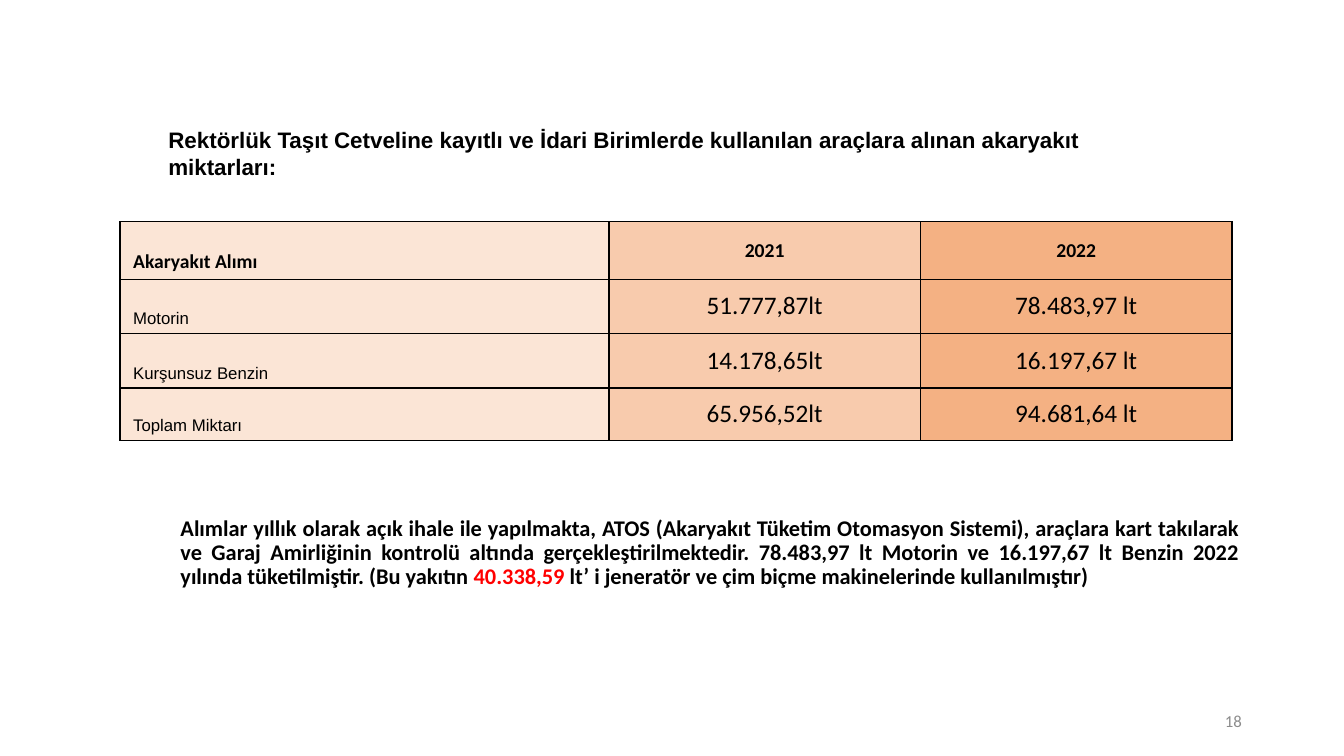
from dataclasses import dataclass

from lxml import etree
from pptx import Presentation
from pptx import util as u
from pptx.dml import color
from pptx.enum import text
from pptx.oxml import ns

WIDTH, HEIGHT = u.Inches(13.333), u.Inches(7.5)
COLUMN_SHARES = (36.38, 23.18, 23.18)
ROW_SHARES = (7.6, 7.2, 7.2, 6.93)
COLUMN_FILLS = ("FBE5D6", "F8CBAD", "F4B183")
FUEL_ROWS = (
    ("Akaryakıt Alımı", "2021", "2022"),
    ("Motorin", "51.777,87lt", "78.483,97 lt"),
    ("Kurşunsuz Benzin", "14.178,65lt", "16.197,67 lt"),
    ("Toplam Miktarı", "65.956,52lt", "94.681,64 lt"),
)
ALIGN, ANCHOR = text.PP_ALIGN, text.MSO_ANCHOR


@dataclass(frozen=True)
class Style:
    size: int
    font: str = "Calibri"
    bold: bool = False
    hue: str = "000000"
    align: ALIGN = ALIGN.LEFT
    anchor: ANCHOR = ANCHOR.TOP
    line_spacing: float = 1.0


@dataclass(frozen=True)
class Area:
    """A place on the slide, in percent of its width and height."""
    left: float
    top: float
    width: float
    height: float

    def lengths(self) -> tuple:
        return across(self.left), down(self.top), across(self.width), down(self.height)


NOTE = Style(16, bold=True, align=ALIGN.JUSTIFY, anchor=ANCHOR.BOTTOM, line_spacing=0.9)
HEADING = Style(16, "Arial", True)
PAGE_NUMBER = Style(12, hue="8C8C8C", align=ALIGN.RIGHT, anchor=ANCHOR.MIDDLE)
TABLE_TITLE = Style(14, bold=True, anchor=ANCHOR.BOTTOM)
YEAR = Style(14, bold=True, align=ALIGN.CENTER, anchor=ANCHOR.MIDDLE)
FUEL = Style(12, "Arial", anchor=ANCHOR.BOTTOM)
AMOUNT = Style(18, align=ALIGN.CENTER, anchor=ANCHOR.MIDDLE)


def across(percent: float) -> int:
    return round(WIDTH * percent / 100)


def down(percent: float) -> int:
    return round(HEIGHT * percent / 100)


def rgb(hue: str) -> color.RGBColor:
    return color.RGBColor.from_string(hue)


def set_all(target, values: dict) -> None:
    for name, value in values.items():
        setattr(target, name, value)


def write(frame, style: Style, *runs: tuple[str, str]) -> None:
    """Fill the first paragraph with (words, colour) runs; no colour means the style's."""
    paragraph = frame.paragraphs[0]
    set_all(paragraph, {"alignment": style.align, "line_spacing": style.line_spacing,
                        "space_before": u.Pt(0)})
    for words, hue in runs:
        run = paragraph.add_run()
        run.text = words
        set_all(run.font, {"size": u.Pt(style.size), "name": style.font, "bold": style.bold})
        run.font.color.rgb = rgb(hue or style.hue)


def fill_shape(shape, area: Area, style: Style, *runs: tuple[str, str]) -> None:
    set_all(shape, dict(zip(("left", "top", "width", "height"), area.lengths())))
    set_all(shape.text_frame, {"word_wrap": True, "auto_size": text.MSO_AUTO_SIZE.NONE,
                               "vertical_anchor": style.anchor})
    write(shape.text_frame, style, *runs)


def add_borders(cell) -> None:
    properties = cell._tc.get_or_add_tcPr()
    for side in ("a:lnL", "a:lnR", "a:lnT", "a:lnB"):
        line = etree.SubElement(properties, ns.qn(side), w=str(u.Pt(1)))
        fill = etree.SubElement(line, ns.qn("a:solidFill"))
        etree.SubElement(fill, ns.qn("a:srgbClr"), val="000000")


def add_fuel_table(slide, area: Area) -> None:
    table = slide.shapes.add_table(len(FUEL_ROWS), len(COLUMN_SHARES), *area.lengths()).table
    set_all(table, {"first_row": False, "horz_banding": False})
    for column, share in zip(table.columns, COLUMN_SHARES):
        column.width = across(share)
    for row, share in zip(table.rows, ROW_SHARES):
        row.height = down(share)
    for i, row in enumerate(FUEL_ROWS):
        label_style, value_style = (FUEL, AMOUNT) if i else (TABLE_TITLE, YEAR)
        for j, words in enumerate(row):
            cell, style = table.cell(i, j), value_style if j else label_style
            add_borders(cell)
            cell.fill.solid()
            cell.fill.fore_color.rgb = rgb(COLUMN_FILLS[j])
            set_all(cell, {"vertical_anchor": style.anchor, "margin_left": across(0.98),
                           "margin_right": across(0.98)})
            write(cell.text_frame, style, (words, ""))


def main() -> None:
    presentation = Presentation()
    set_all(presentation, {"slide_width": WIDTH, "slide_height": HEIGHT})
    slide = presentation.slides.add_slide(presentation.slide_layouts[0])
    note, heading = slide.placeholders
    fill_shape(
        note, Area(12.68, 60.8, 80.33, 17.87), NOTE,
        ("Alımlar yıllık olarak açık ihale ile yapılmakta, ATOS (Akaryakıt Tüketim Otomasyon "
         "Sistemi), araçlara kart takılarak ve Garaj Amirliğinin kontrolü altında "
         "gerçekleştirilmektedir. 78.483,97 lt Motorin ve 16.197,67 lt Benzin 2022 yılında "
         "tüketilmiştir. (Bu yakıtın ", ""),
        ("40.338,59 ", "FF0000"),
        ("lt’ i jeneratör ve çim biçme makinelerinde kullanılmıştır)", ""))
    fill_shape(
        heading, Area(11.78, 16, 71.7, 13.87), HEADING,
        ("Rektörlük Taşıt Cetveline kayıtlı ve İdari Birimlerde kullanılan araçlara alınan "
         "akaryakıt miktarları:", ""))
    add_fuel_table(slide, Area(8.93, 29.33, sum(COLUMN_SHARES), sum(ROW_SHARES)))
    number_area = Area(70.65, 92.67, 22.5, 5.33)
    fill_shape(slide.shapes.add_textbox(*number_area.lengths()), number_area, PAGE_NUMBER,
               ("18", ""))
    presentation.save("out.pptx")


if __name__ == "__main__":
    main()
